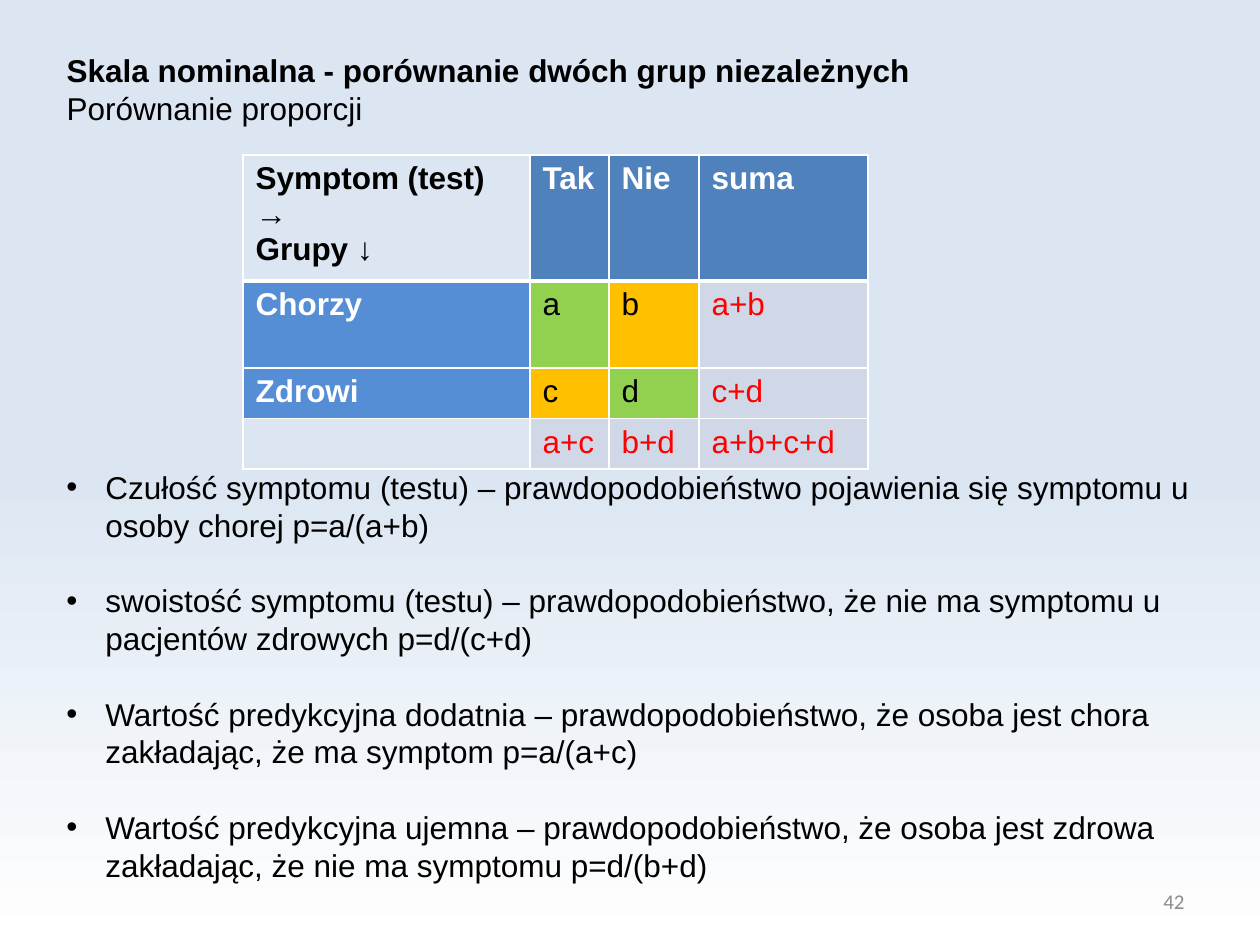
from copy import deepcopy

from lxml.etree import SubElement
from pptx import Presentation
from pptx.dml.color import RGBColor
from pptx.enum.text import MSO_ANCHOR as Anchor, MSO_AUTO_SIZE as AutoSize, PP_ALIGN as Align
from pptx.oxml.ns import qn
from pptx.util import Pt

SCALE = 914400 / 126
COLORS = {
    "sky": "DCE6F2", "white": "FFFFFF", "black": "000000", "grey": "8C8C8C",
    "header": "4F81BD", "group": "558ED5", "hit": "92D050", "miss": "FFC000",
    "total": "D0D8E8", "sum": "FF0000",
}
COLUMNS = [287, 79, 90, 169]
ROWS = [97, 87, 44, 44]
STYLES = {
    "corner": (None, "black", True),
    "header": ("header", "white", True),
    "group": ("group", "white", True),
    "hit": ("hit", "black", False),
    "miss": ("miss", "black", False),
    "total": ("total", "sum", False),
    "empty": (None, "black", False),
}
CELLS = [
    [("Symptom (test) →\nGrupy ↓", "corner"), ("Tak", "header"), ("Nie", "header"), ("suma", "header")],
    [("Chorzy", "group"), ("a", "hit"), ("b", "miss"), ("a+b", "total")],
    [("Zdrowi", "group"), ("c", "miss"), ("d", "hit"), ("c+d", "total")],
    [("", "empty"), ("a+c", "total"), ("b+d", "total"), ("a+b+c+d", "total")],
]
DEFINITIONS = [
    "Czułość symptomu (testu) – prawdopodobieństwo pojawienia się symptomu u osoby chorej p=a/(a+b)",
    "swoistość symptomu (testu) – prawdopodobieństwo, że nie ma symptomu u pacjentów zdrowych p=d/(c+d)",
    "Wartość predykcyjna dodatnia – prawdopodobieństwo, że osoba jest chora zakładając, że ma symptom p=a/(a+c)",
    "Wartość predykcyjna ujemna – prawdopodobieństwo, że osoba jest zdrowa zakładając, że nie ma symptomu p=d/(b+d)",
]


def px(length):
    """Turn pixels into EMU."""
    return round(length * SCALE)


def rgb(name):
    """Look up a named colour."""
    return RGBColor.from_string(COLORS[name])


def format_runs(para, color="black", bold=False, size=18, font="Arial"):
    """Apply one font to all runs of a paragraph."""
    for span in para.runs:
        span.font.name = font
        span.font.size = Pt(size)
        span.font.bold = bold
        span.font.color.rgb = rgb(color)


def paint_background(page):
    """Fill the page with a gradient that fades to white in its lower half."""
    fill = page.background.fill
    fill.gradient()
    fill.gradient_angle = 270
    first, last = fill.gradient_stops
    first.color.rgb, first.position = rgb("sky"), 0
    last.color.rgb, last.position = rgb("white"), 1
    stops = page.element.find(".//" + qn("a:gsLst"))
    middle = deepcopy(stops[0])
    middle.set("pos", "50000")
    stops.insert(1, middle)


def add_heading(page, left, top, width, height):
    """Place the bold title and its plain second line."""
    title = page.shapes.title
    title.left, title.top, title.width, title.height = map(px, (left, top, width, height))
    frame = title.text_frame
    frame.text = "Skala nominalna - porównanie dwóch grup niezależnych\nPorównanie proporcji"
    frame.word_wrap = False
    frame.auto_size = AutoSize.SHAPE_TO_FIT_TEXT
    frame.vertical_anchor = Anchor.TOP
    for para, bold in zip(frame.paragraphs, (True, False)):
        para.alignment = Align.LEFT
        format_runs(para, bold=bold)


def set_borders(cell, top, bottom):
    """Draw white cell borders with the given top and bottom widths."""
    properties = cell._tc.get_or_add_tcPr()
    for tag, width in (("a:lnL", 1), ("a:lnR", 1), ("a:lnT", top), ("a:lnB", bottom)):
        line = SubElement(properties, qn(tag), w=str(Pt(width)))
        solid = SubElement(line, qn("a:solidFill"))
        SubElement(solid, qn("a:srgbClr"), val=COLORS["white"])


def add_contingency_table(page, left, top):
    """Place the two-by-two table with its sums."""
    frame = page.shapes.add_table(len(ROWS), len(COLUMNS), px(left), px(top), px(sum(COLUMNS)), px(sum(ROWS)))
    table = frame.table
    for column, width in zip(table.columns, COLUMNS):
        column.width = px(width)
    for index, (row, height, entries) in enumerate(zip(table.rows, ROWS, CELLS)):
        row.height = px(height)
        for cell, (text, style) in zip(row.cells, entries):
            fill, color, bold = STYLES[style]
            set_borders(cell, 3 if index == 1 else 1, 3 if index == 0 else 1)
            if fill:
                cell.fill.solid()
                cell.fill.fore_color.rgb = rgb(fill)
            else:
                cell.fill.background()
            cell.text_frame.text = text
            for para in cell.text_frame.paragraphs:
                format_runs(para, color, bold)


def add_definitions(page, left, top, width, height):
    """Place the bulleted definitions, one line apart."""
    box = page.shapes.add_textbox(*map(px, (left, top, width, height)))
    frame = box.text_frame
    frame.word_wrap = True
    frame.text = "\n".join(DEFINITIONS)
    for para in frame.paragraphs:
        format_runs(para)
        para.space_after = Pt(21.5)
        properties = para._p.get_or_add_pPr()
        properties.set("marL", str(px(39)))
        properties.set("indent", str(-px(39)))
        SubElement(properties, qn("a:buFont"), typeface="Arial")
        SubElement(properties, qn("a:buChar"), char="•")


def add_page_number(page, left, top, width, height):
    """Place the page number at the lower right."""
    box = page.shapes.add_textbox(*map(px, (left, top, width, height)))
    frame = box.text_frame
    frame.word_wrap = True
    frame.vertical_anchor = Anchor.MIDDLE
    frame.text = "42"
    para = frame.paragraphs[0]
    para.alignment = Align.RIGHT
    format_runs(para, "grey", size=12, font="Calibri")


def main():
    """Build and save the deck."""
    deck = Presentation()
    deck.slide_width, deck.slide_height = px(1260), px(945)
    page = deck.slides.add_slide(deck.slide_layouts.get_by_name("Title Only"))
    paint_background(page)
    add_page_number(page, 903, 876, 294, 50)
    add_heading(page, 54, 45, 877, 89)
    add_contingency_table(page, 243, 155)
    add_definitions(page, 54, 462, 1182, 471)
    deck.save("out.pptx")


if __name__ == "__main__":
    main()
